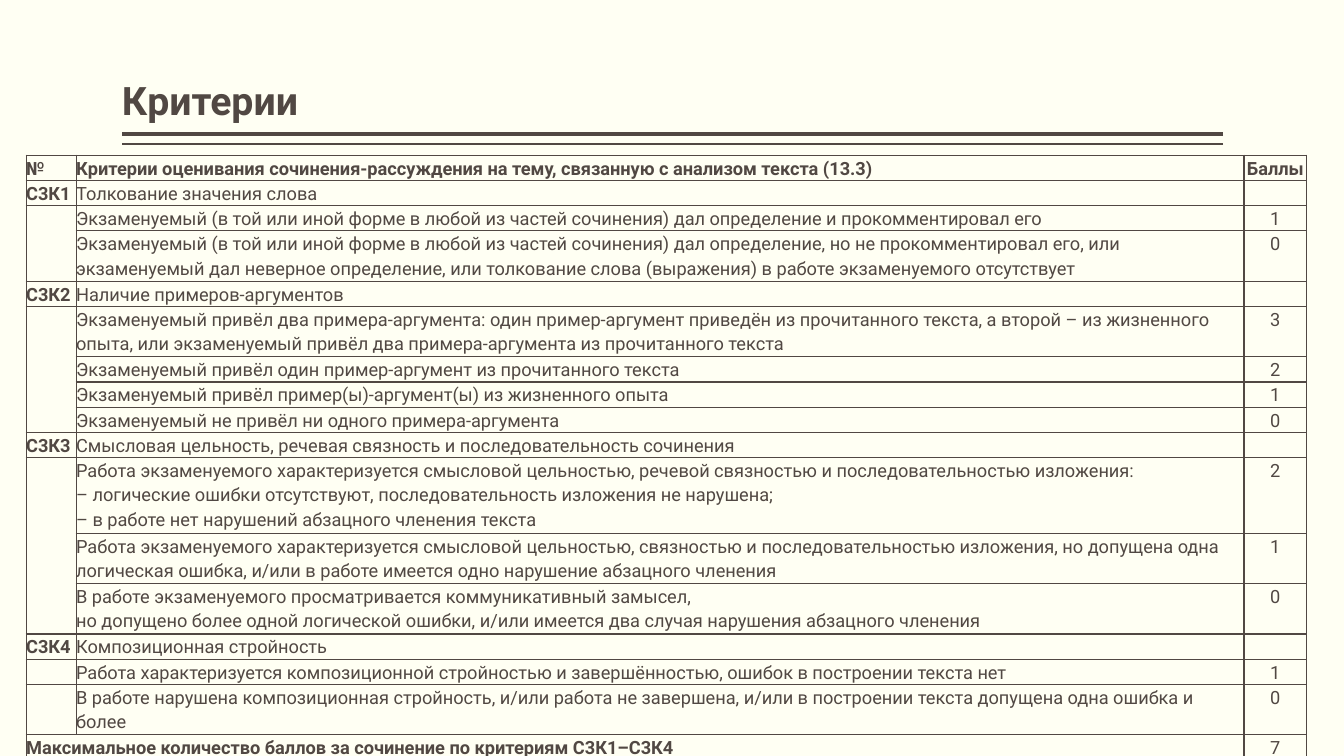
"""Build the slide with the essay assessment criteria."""
from lxml import etree
from pptx import Presentation
from pptx import util as u
from pptx.dml.color import RGBColor
from pptx.enum import shapes, text
from pptx.oxml import ns

INK = RGBColor(0x51, 0x48, 0x43)
PAPER = RGBColor(0xFF, 0xFF, 0xF3)
FONT = "Roboto"
SLIDE_WIDTH, SLIDE_HEIGHT = 13.33, 7.5
TITLE_BOX = (1.21, 0.08, 10.92, 1.2)
TABLE_BOX = (0.26, 1.54, 12.7)
COLUMN_SHARES = (0.039, 0.912, 0.049)
LINE_HEIGHT = 0.25
MERGED_SECTIONS = ("С3К1", "С3К2", "С3К3")

SECTIONS = [
    ("С3К1", "Толкование значения слова", [
        (1, "Экзаменуемый (в той или иной форме в любой из частей сочинения) дал определение и прокомментировал его", "1"),
        (2, "Экзаменуемый (в той или иной форме в любой из частей сочинения) дал определение, но не прокомментировал его, "
            "или экзаменуемый дал неверное определение, или толкование слова (выражения) в работе экзаменуемого отсутствует", "0"),
    ]),
    ("С3К2", "Наличие примеров-аргументов", [
        (2, "Экзаменуемый привёл два примера-аргумента: один пример-аргумент приведён из прочитанного текста, а второй – "
            "из жизненного опыта, или экзаменуемый привёл два примера-аргумента из прочитанного текста", "3"),
        (1, "Экзаменуемый привёл один пример-аргумент из прочитанного текста", "2"),
        (1, "Экзаменуемый привёл пример(ы)-аргумент(ы) из жизненного опыта", "1"),
        (1, "Экзаменуемый не привёл ни одного примера-аргумента", "0"),
    ]),
    ("С3К3", "Смысловая цельность, речевая связность и последовательность сочинения", [
        (3, "Работа экзаменуемого характеризуется смысловой цельностью, речевой связностью и последовательностью изложения:\n"
            "– логические ошибки отсутствуют, последовательность изложения не нарушена;\n"
            "– в работе нет нарушений абзацного членения текста", "2"),
        (2, "Работа экзаменуемого характеризуется смысловой цельностью, связностью и последовательностью изложения, "
            "но допущена одна логическая ошибка, и/или в работе имеется одно нарушение абзацного членения", "1"),
        (2, "В работе экзаменуемого просматривается коммуникативный замысел,\n"
            "но допущено более одной логической ошибки, и/или имеется два случая нарушения абзацного членения", "0"),
    ]),
    ("С3К4", "Композиционная стройность", [
        (1, "Работа характеризуется композиционной стройностью и завершённостью, ошибок в построении текста нет", "1"),
        (2, "В работе нарушена композиционная стройность, и/или работа не завершена, "
            "и/или в построении текста допущена одна ошибка и более", "0"),
    ]),
]


def write(frame, content, size=13, bold=False, align=text.PP_ALIGN.LEFT, spacing=1.15):
    """Write one formatted paragraph into a text frame."""
    paragraph = frame.paragraphs[0]
    paragraph.text = content
    paragraph.alignment = align
    paragraph.line_spacing = spacing
    for run in paragraph.runs:
        run.font.name = FONT
        run.font.size = u.Pt(size)
        run.font.bold = bold
        run.font.color.rgb = INK
    if not content:
        etree.SubElement(paragraph._p, ns.qn("a:endParaRPr"), sz=str(size * 100))


def add_rule(slide, left, right, top, weight):
    """Draw a horizontal line."""
    rule = slide.shapes.add_connector(
        shapes.MSO_CONNECTOR.STRAIGHT, u.Inches(right), u.Inches(top), u.Inches(left), u.Inches(top))
    rule.line.color.rgb = INK
    rule.line.width = u.Pt(weight)
    etree.SubElement(rule._element.spPr, ns.qn("a:effectLst"))


def add_title(slide, box, content):
    """Place the title with its double underline."""
    left, top, width, height = box
    shape = slide.shapes.add_textbox(*map(u.Inches, box))
    frame = shape.text_frame
    frame.word_wrap = True
    frame.vertical_anchor = text.MSO_ANCHOR.BOTTOM
    frame.margin_left = frame.margin_right = 0
    write(frame, content, size=28, bold=True, spacing=0.9)
    for offset, weight in ((0.05, 3), (0.15, 1)):
        add_rule(slide, left, left + width, top + height + offset, weight)


def format_cell(cell):
    """Clear the fill and margins of a cell and outline it."""
    cell.margin_left = cell.margin_right = cell.margin_top = cell.margin_bottom = 0
    properties = cell._tc.get_or_add_tcPr()
    for side in ("a:lnL", "a:lnR", "a:lnT", "a:lnB"):
        border = etree.SubElement(properties, ns.qn(side), w=str(u.Pt(1)))
        fill = etree.SubElement(border, ns.qn("a:solidFill"))
        etree.SubElement(fill, ns.qn("a:srgbClr"), val=str(INK))
    cell.fill.background()


def criteria_rows():
    """List the rows as line count, three texts and three bold flags."""
    heading = "Критерии оценивания сочинения-рассуждения на тему, связанную с анализом текста (13.3)"
    total = "Максимальное количество баллов за сочинение по критериям С3К1–С3К4"
    rows = [(1, ("№", heading, "Баллы"), (True, True, True))]
    for code, name, levels in SECTIONS:
        rows.append((1, (code, name, ""), (True, False, False)))
        rows += [(lines, ("", level, score), (False, False, False)) for lines, level, score in levels]
    return rows + [(1, (total, "", "7"), (True, False, False))]


def add_criteria(slide, box):
    """Place the criteria table."""
    left, top, width = box
    rows = criteria_rows()
    height = LINE_HEIGHT * sum(row[0] for row in rows)
    table = slide.shapes.add_table(
        len(rows), len(COLUMN_SHARES), *map(u.Inches, (left, top, width, height))).table
    table.first_row = table.horz_banding = False
    for column, share in zip(table.columns, COLUMN_SHARES):
        column.width = u.Inches(width * share)
    for row_index, (lines, contents, bolds) in enumerate(rows):
        table.rows[row_index].height = u.Inches(LINE_HEIGHT * lines)
        for column_index, (content, bold) in enumerate(zip(contents, bolds)):
            cell = table.cell(row_index, column_index)
            format_cell(cell)
            align = text.PP_ALIGN.CENTER if column_index == 2 else text.PP_ALIGN.LEFT
            write(cell.text_frame, content, bold=bold, align=align)
    first = 2
    for code, _, levels in SECTIONS:
        if code in MERGED_SECTIONS:
            table.cell(first, 0).merge(table.cell(first + len(levels) - 1, 0))
        first += len(levels) + 1
    last = len(rows) - 1
    table.cell(last, 0).merge(table.cell(last, 1))


def main():
    """Create and save the presentation."""
    presentation = Presentation()
    presentation.slide_width = u.Inches(SLIDE_WIDTH)
    presentation.slide_height = u.Inches(SLIDE_HEIGHT)
    slide = presentation.slides.add_slide(presentation.slide_layouts[6])
    slide.background.fill.solid()
    slide.background.fill.fore_color.rgb = PAPER
    add_title(slide, TITLE_BOX, "Критерии")
    add_criteria(slide, TABLE_BOX)
    presentation.save("out.pptx")


if __name__ == "__main__":
    main()
